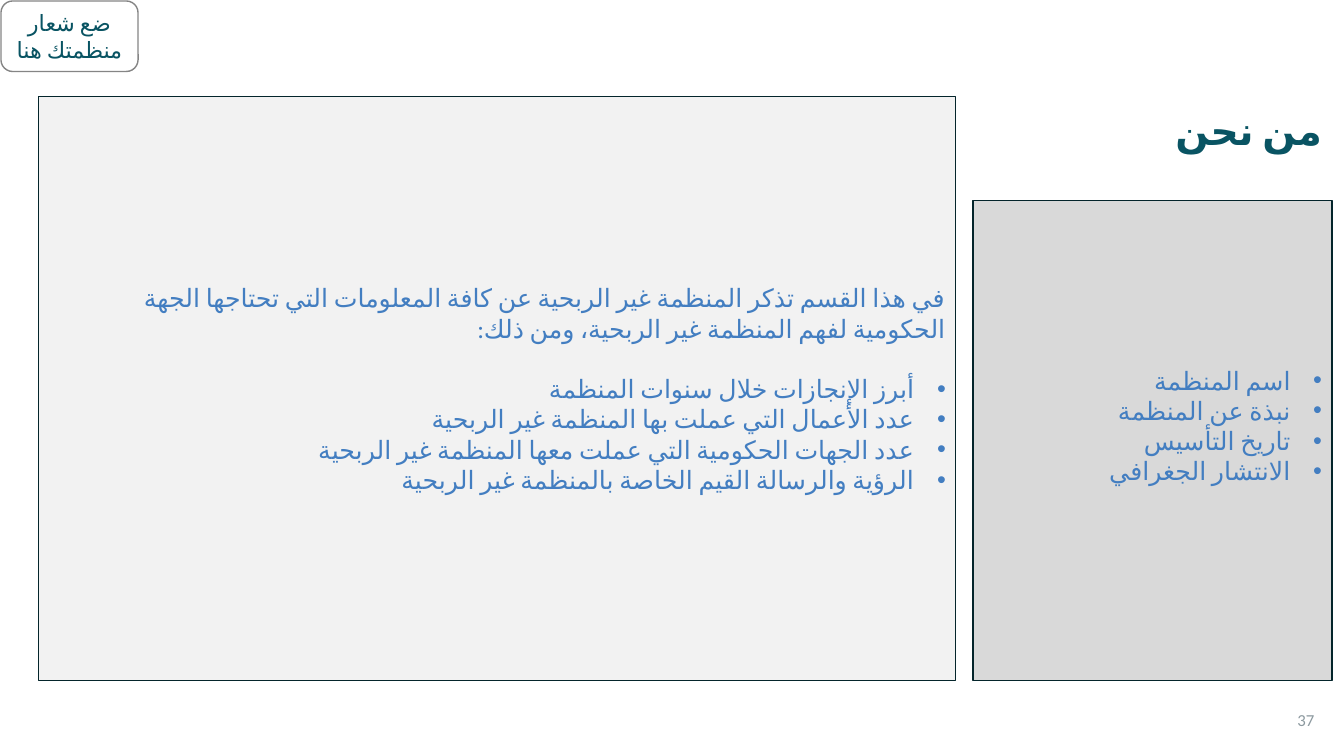
from dataclasses import dataclass

from lxml.etree import SubElement
from pptx import Presentation
from pptx.dml.color import RGBColor
from pptx.enum.lang import MSO_LANGUAGE_ID as Language
from pptx.enum.shapes import MSO_SHAPE as Shape
from pptx.enum.text import MSO_ANCHOR as Anchor, MSO_AUTO_SIZE as AutoSize, PP_ALIGN as Align
from pptx.oxml.ns import qn
from pptx.util import Inches, Pt


@dataclass(frozen=True)
class Theme:
    font: str = "Calibri"
    heading: str = "095463"
    body: str = "437EC1"
    muted: str = "8C999F"
    white: str = "FFFFFF"
    light_panel: str = "F2F2F2"
    dark_panel: str = "D9D9D9"
    panel_line: str = "04252B"
    logo_line: str = "858585"
    title_size: int = 28
    body_size: int = 18
    logo_size: int = 16
    number_size: int = 12
    bullet_indent: float = 0.31


THEME = Theme()
INTRO = ("في هذا القسم تذكر المنظمة غير الربحية عن كافة المعلومات التي تحتاجها "
         "الجهة الحكومية لفهم المنظمة غير الربحية، ومن ذلك:")
ACHIEVEMENTS = [
    "أبرز الإنجازات خلال سنوات المنظمة",
    "عدد الأعمال التي عملت بها المنظمة غير الربحية",
    "عدد الجهات الحكومية التي عملت معها المنظمة غير الربحية",
    "الرؤية والرسالة القيم الخاصة بالمنظمة غير الربحية",
]
PROFILE = ["اسم المنظمة", "نبذة عن المنظمة", "تاريخ التأسيس", "الانتشار الجغرافي"]


def style_paragraph(para, size, color, align=Align.RIGHT, bold=False, rtl=True):
    para.alignment = align
    if rtl:
        para._p.get_or_add_pPr().set("rtl", "1")
    # The language also goes on the runs, where Arabic shaping looks for it
    for font in [para.font] + [span.font for span in para.runs]:
        font.language_id = Language.ARABIC
    para.font.name = THEME.font
    para.font.size = Pt(size)
    para.font.bold = bold
    para.font.color.rgb = RGBColor.from_string(color)
    # Arabic letters take the complex-script font
    SubElement(para.font._element, qn("a:cs"), typeface=THEME.font)


def add_bullet(para):
    props = para._p.get_or_add_pPr()
    indent = Inches(THEME.bullet_indent)
    props.set("marL", str(indent))
    props.set("indent", str(-indent))
    SubElement(props, qn("a:buFont"), typeface="Arial")
    SubElement(props, qn("a:buChar"), char="•")


def add_block(page, kind, box, fill, line):
    block = page.shapes.add_shape(kind, *map(Inches, box))
    block.shadow.inherit = False
    block.fill.solid()
    block.fill.fore_color.rgb = RGBColor.from_string(fill)
    block.line.color.rgb = RGBColor.from_string(line)
    block.line.width = Pt(1)
    block.text_frame.word_wrap = True
    block.text_frame.vertical_anchor = Anchor.MIDDLE
    return block


def add_logo_box(page, box):
    block = add_block(page, Shape.ROUNDED_RECTANGLE, box, THEME.white, THEME.logo_line)
    para = block.text_frame.paragraphs[0]
    para.text = "ضع شعار منظمتك هنا"
    style_paragraph(para, THEME.logo_size, THEME.heading, Align.CENTER, rtl=False)


def set_title(page, box, text):
    title = page.shapes.title
    title.left, title.top, title.width, title.height = map(Inches, box)
    frame = title.text_frame
    frame.text = text
    frame.word_wrap = True
    frame.auto_size = AutoSize.SHAPE_TO_FIT_TEXT
    frame.vertical_anchor = Anchor.TOP
    style_paragraph(frame.paragraphs[0], THEME.title_size, THEME.heading, bold=True)


def add_panel(page, box, fill, bullets, intro=None, bottom_inset=0.05):
    frame = add_block(page, Shape.RECTANGLE, box, fill, THEME.panel_line).text_frame
    frame.margin_bottom = Inches(bottom_inset)
    lines = ([intro] if intro else []) + bullets
    for index, text in enumerate(lines):
        para = frame.add_paragraph() if index else frame.paragraphs[0]
        para.text = text
        if text == intro:
            para.space_after = Pt(THEME.body_size * 1.2)
        else:
            add_bullet(para)
        style_paragraph(para, THEME.body_size, THEME.body)


def add_page_number(page, box, number):
    frame = page.shapes.add_textbox(*map(Inches, box)).text_frame
    frame.word_wrap = True
    para = frame.paragraphs[0]
    para.text = str(number)
    style_paragraph(para, THEME.number_size, THEME.muted, Align.LEFT, rtl=False)


def build_about_slide(deck):
    page = deck.slides.add_slide(deck.slide_layouts[5])
    side_left, side_width, bottom = 9.65, 3.56, 6.75
    main_top, side_top = 0.96, 1.99

    # Logo holder, page number and title
    add_logo_box(page, (0.01, 0.01, 1.36, 0.7))
    add_page_number(page, (12.77, 6.99, 0.44, 0.4), 37)
    set_title(page, (side_left, 1, side_width, 0.57), "من نحن")

    # Main panel and side panel share a bottom edge
    add_panel(page, (0.38, main_top, 9.1, bottom - main_top),
              THEME.light_panel, ACHIEVEMENTS, INTRO)
    add_panel(page, (side_left, side_top, side_width, bottom - side_top),
              THEME.dark_panel, PROFILE, bottom_inset=0.35)


def main():
    deck = Presentation()
    deck.slide_width, deck.slide_height = Inches(13.33), Inches(7.5)
    build_about_slide(deck)
    deck.save("out.pptx")


if __name__ == "__main__":
    main()
